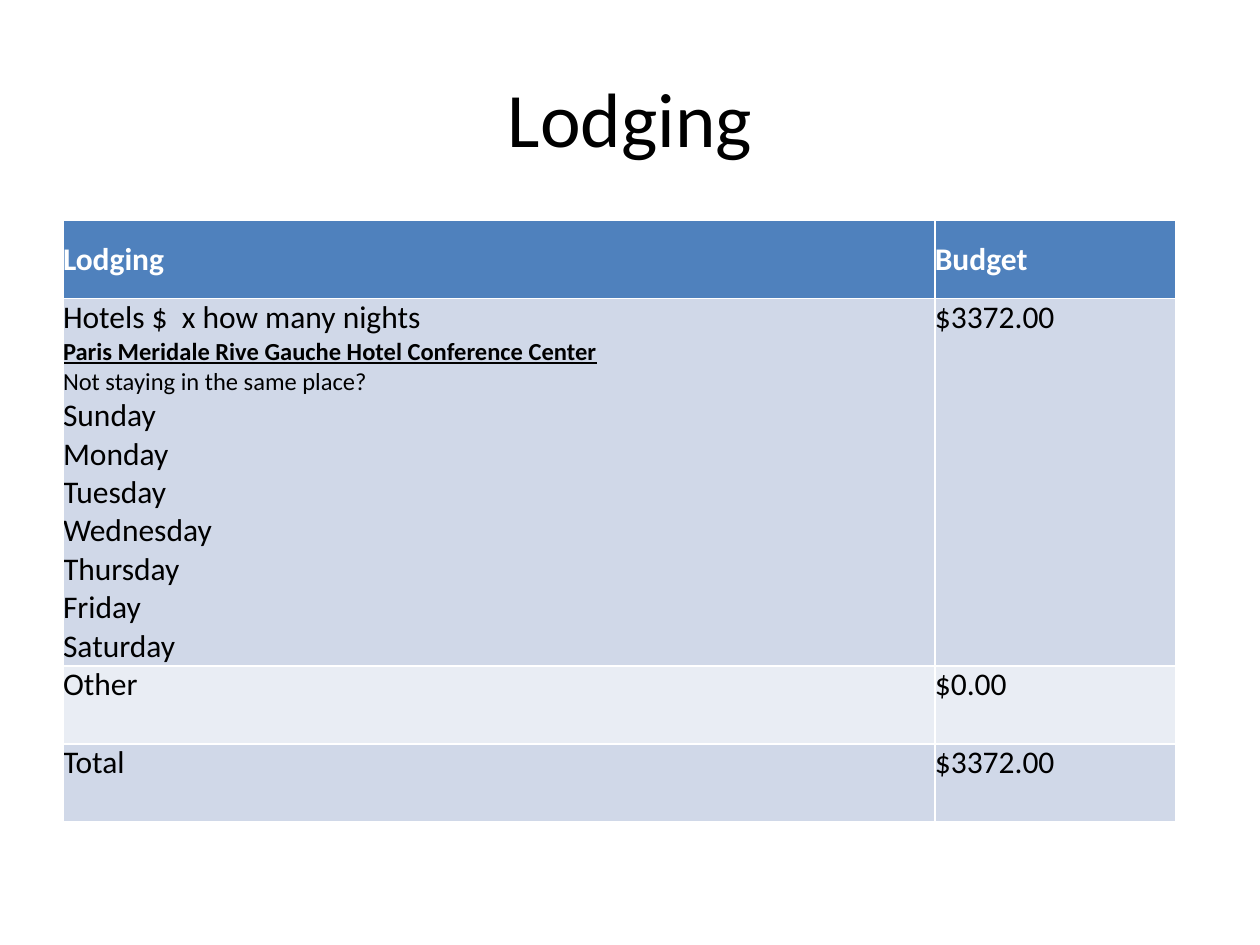
from dataclasses import dataclass

from pptx import Presentation
from pptx.dml.color import RGBColor
from pptx.enum import text
from pptx.util import Inches, Pt


@dataclass(frozen=True)
class Theme:
    font: str = "Calibri"
    ink: str = "000000"
    header_ink: str = "FFFFFF"
    header_fill: str = "4F81BD"
    bands: tuple = ("D0D8E8", "E9EDF4")
    title_size: int = 44
    body_size: int = 18
    detail_size: int = 14


THEME = Theme()
DAYS = ["Sunday", "Monday", "Tuesday", "Wednesday", "Thursday", "Friday", "Saturday"]
HOTEL = "Paris Meridale Rive Gauche Hotel Conference Center"
QUESTION = "Not staying in the same place?"
BUDGET_ROWS = [
    (["Lodging"], ["Budget"]),
    (["Hotels $  x how many nights", HOTEL, QUESTION, *DAYS], ["$3372.00"]),
    (["Other"], ["$0.00"]),
    (["Total"], ["$3372.00"]),
]
COLUMN_WIDTHS = [6.92, 1.91]
ROW_HEIGHTS = [0.62, 2.9, 0.62, 0.62]


def style_font(font, size, color, bold=False):
    font.name = THEME.font
    font.size = Pt(size)
    font.bold = bold
    font.color.rgb = RGBColor.from_string(color)


def place_title(slide, words, left, top, width, height):
    title = slide.shapes.title
    title.left, title.top, title.width, title.height = left, top, width, height
    title.text_frame.text = words
    title.text_frame.vertical_anchor = text.MSO_ANCHOR.MIDDLE
    paragraph = title.text_frame.paragraphs[0]
    paragraph.alignment = text.PP_ALIGN.CENTER
    style_font(paragraph.font, THEME.title_size, THEME.ink)


def fill_cell(cell, lines, is_header, fill):
    cell.margin_left = cell.margin_right = cell.margin_top = cell.margin_bottom = 0
    cell.vertical_anchor = text.MSO_ANCHOR.MIDDLE if is_header else text.MSO_ANCHOR.TOP
    cell.fill.solid()
    cell.fill.fore_color.rgb = RGBColor.from_string(fill)
    cell.text_frame.text = "\n".join(lines)
    color = THEME.header_ink if is_header else THEME.ink
    for paragraph, line in zip(cell.text_frame.paragraphs, lines):
        size = THEME.detail_size if line in (HOTEL, QUESTION) else THEME.body_size
        style_font(paragraph.font, size, color, bold=is_header or line == HOTEL)
        if line == HOTEL:
            paragraph.font.underline = True


def place_budget_table(slide, left, top, width, height):
    table = slide.shapes.add_table(
        len(ROW_HEIGHTS), len(COLUMN_WIDTHS), left, top, width, height
    ).table
    for column, column_width in zip(table.columns, COLUMN_WIDTHS):
        column.width = Inches(column_width)
    for index, (row, row_height) in enumerate(zip(table.rows, ROW_HEIGHTS)):
        row.height = Inches(row_height)
        is_header = index == 0
        fill = THEME.header_fill if is_header else THEME.bands[(index - 1) % 2]
        for cell, lines in zip(row.cells, BUDGET_ROWS[index]):
            fill_cell(cell, lines, is_header, fill)


def main():
    presentation = Presentation()
    presentation.slide_width = Inches(10)
    presentation.slide_height = Inches(7.5)
    slide = presentation.slides.add_slide(presentation.slide_layouts.get_by_name("Title Only"))
    place_title(slide, "Lodging", Inches(0.5), Inches(0.3), Inches(9), Inches(1.25))
    place_budget_table(
        slide, Inches(0.5), Inches(1.75), Inches(sum(COLUMN_WIDTHS)), Inches(sum(ROW_HEIGHTS))
    )
    presentation.save("out.pptx")


if __name__ == "__main__":
    main()
